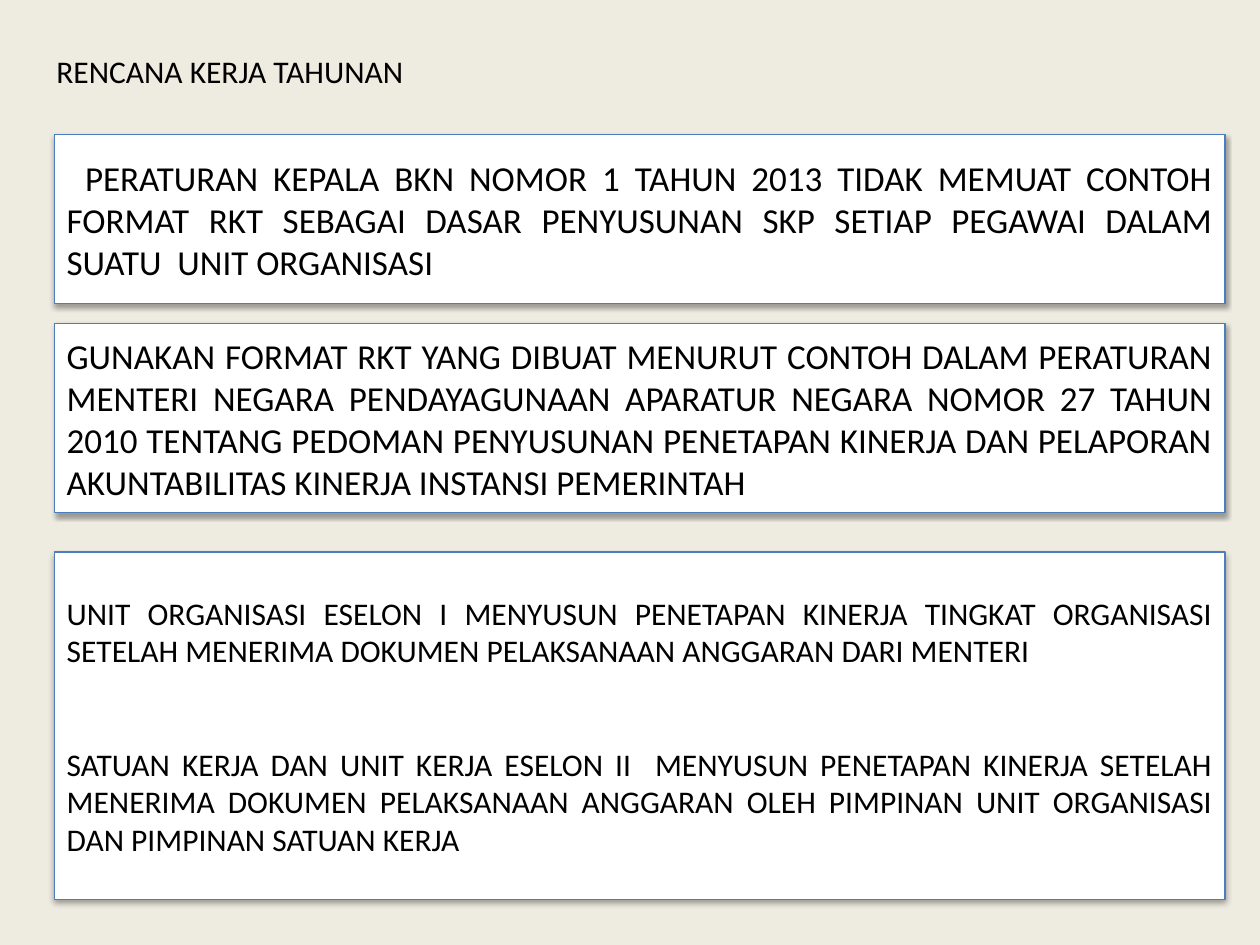
"""Build the annual work plan slide with three framed statements."""
from lxml import etree
from pptx import Presentation
from pptx.dml.color import RGBColor
from pptx.enum import shapes, text
from pptx.oxml.ns import qn
from pptx.util import Pt

TITLE = "RENCANA KERJA TAHUNAN"
PANELS = [
    dict(top=77, high=96.5, size="large", indent=10.5, paras=[
        "PERATURAN KEPALA BKN NOMOR 1 TAHUN 2013 TIDAK MEMUAT CONTOH FORMAT RKT "
        "SEBAGAI DASAR PENYUSUNAN SKP SETIAP PEGAWAI DALAM SUATU  UNIT ORGANISASI"]),
    dict(top=185, high=108, size="large", indent=0, paras=[
        "GUNAKAN FORMAT RKT YANG DIBUAT MENURUT CONTOH DALAM PERATURAN MENTERI NEGARA "
        "PENDAYAGUNAAN APARATUR NEGARA NOMOR 27 TAHUN 2010 TENTANG PEDOMAN PENYUSUNAN "
        "PENETAPAN KINERJA DAN PELAPORAN AKUNTABILITAS KINERJA INSTANSI PEMERINTAH"]),
    dict(top=315.5, high=198.5, size="base", indent=0, paras=[
        "UNIT ORGANISASI ESELON I MENYUSUN PENETAPAN KINERJA TINGKAT ORGANISASI SETELAH "
        "MENERIMA DOKUMEN PELAKSANAAN ANGGARAN DARI MENTERI",
        "SATUAN KERJA DAN UNIT KERJA ESELON II  MENYUSUN PENETAPAN KINERJA SETELAH "
        "MENERIMA DOKUMEN PELAKSANAAN ANGGARAN OLEH PIMPINAN UNIT ORGANISASI DAN "
        "PIMPINAN SATUAN KERJA"]),
]
THEME = dict(font="Calibri", base=18, large=20, ink="000000", back="EEECE1",
             panel="FFFFFF", edge="4B7EBC", line=0.75, gap=43)
LEFT, WIDE = 31, 669


def color(name):
    return RGBColor.from_string(THEME[name])


def write(frame, paras, size="base", align=text.PP_ALIGN.LEFT,
          anchor=text.MSO_ANCHOR.TOP, indent=0):
    frame.word_wrap = True
    frame.auto_size = text.MSO_AUTO_SIZE.NONE
    frame.vertical_anchor = anchor
    for i, words in enumerate(paras):
        para = frame.add_paragraph() if i else frame.paragraphs[0]
        para.alignment = align
        para.space_before = Pt(THEME["gap"] if i else 0)
        if indent:
            para._p.get_or_add_pPr().set("indent", str(Pt(indent)))
        run = para.add_run()
        run.text = words
        run.font.name = THEME["font"]
        run.font.size = Pt(THEME[size])
        run.font.color.rgb = color("ink")


def shade(shape):
    shape.shadow.inherit = False
    effects = shape._element.spPr.find(qn("a:effectLst"))
    outer = etree.SubElement(effects, qn("a:outerShdw"), blurRad=str(Pt(3.1)),
                             dist=str(Pt(1.8)), dir="5400000", rotWithShape="0")
    tint = etree.SubElement(outer, qn("a:srgbClr"), val=THEME["ink"])
    etree.SubElement(tint, qn("a:alpha"), val="35000")


def panel(slide, top, high, size, indent, paras):
    box = slide.shapes.add_shape(shapes.MSO_SHAPE.RECTANGLE,
                                 Pt(LEFT), Pt(top), Pt(WIDE), Pt(high))
    box.fill.solid()
    box.fill.fore_color.rgb = color("panel")
    box.line.color.rgb = color("edge")
    box.line.width = Pt(THEME["line"])
    shade(box)
    write(box.text_frame, paras, size=size, align=text.PP_ALIGN.JUSTIFY,
          anchor=text.MSO_ANCHOR.MIDDLE, indent=indent)


def main():
    deck = Presentation()
    deck.slide_width, deck.slide_height = Pt(720), Pt(540)
    slide = deck.slides.add_slide(deck.slide_layouts[5])
    slide.background.fill.solid()
    slide.background.fill.fore_color.rgb = color("back")
    title = slide.shapes.title
    title.left, title.top, title.width, title.height = map(Pt, (25, 26, 675, 29))
    write(title.text_frame, [TITLE])
    for item in PANELS:
        panel(slide, **item)
    deck.save("out.pptx")


if __name__ == "__main__":
    main()
